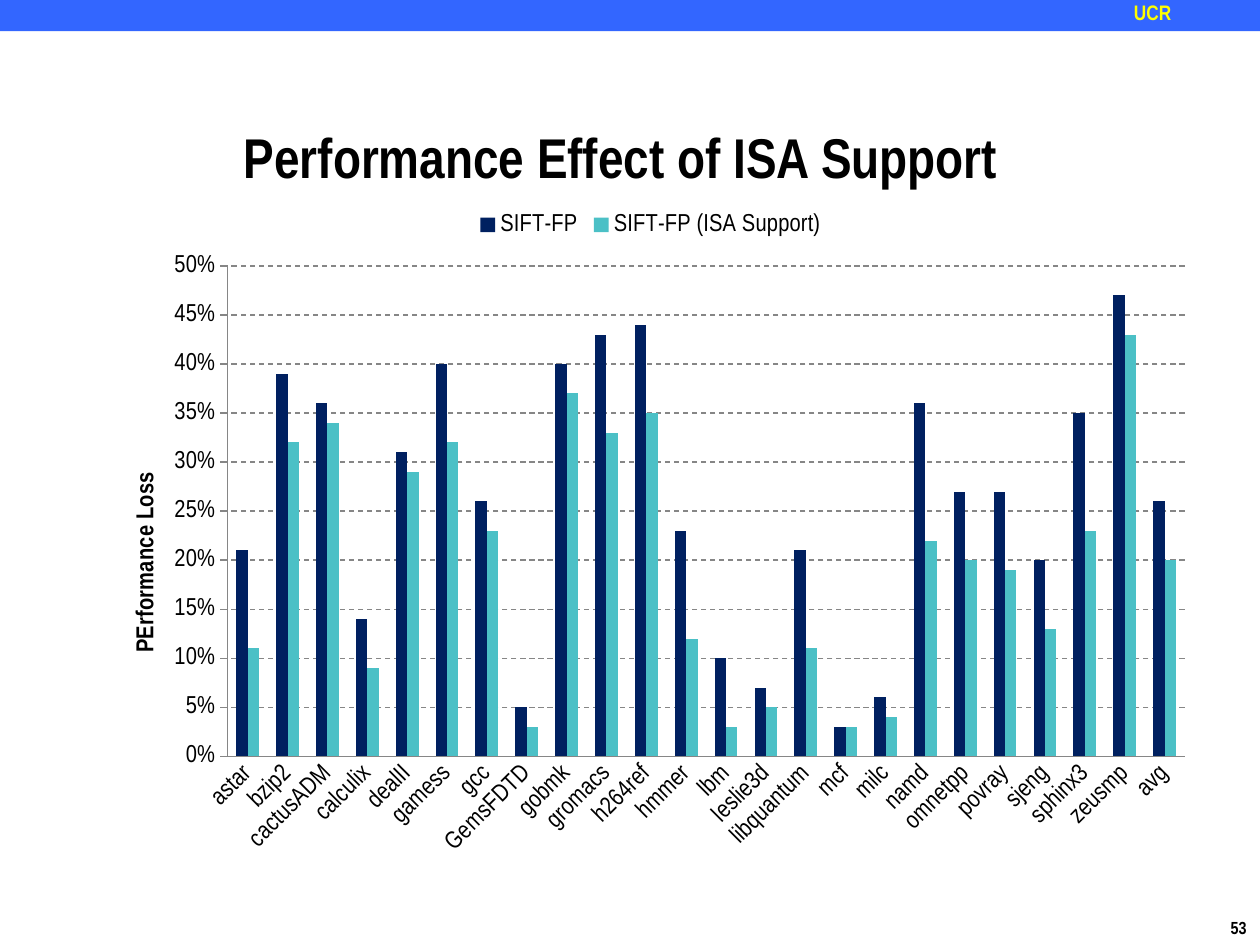
from pptx import Presentation
from pptx.chart import data
from pptx.dml.color import RGBColor
from pptx.enum import chart as ch, dml, shapes, text
from pptx.oxml import parse_xml
from pptx.oxml.ns import nsdecls, qn
from pptx.util import Cm, Pt

BLACK = RGBColor(0x00, 0x00, 0x00)
BLUE = RGBColor(0x33, 0x66, 0xFF)
YELLOW = RGBColor(0xFF, 0xFF, 0x00)
NAVY = RGBColor(0x00, 0x20, 0x60)
TEAL = RGBColor(0x4B, 0xC0, 0xC6)
GRAY = RGBColor(0x86, 0x86, 0x86)
FONT = "Arial Narrow"

LABELS = [
    {"words": "53", "box": (24.56, 18.36, 0.86, 0.69), "size": 10, "color": BLACK,
     "frame": {"word_wrap": False}, "paragraph": {}},
    {"words": "UCR", "box": (22.86, 0, 2.54, 0.56), "size": 12, "color": YELLOW,
     "frame": {"word_wrap": True, "margin_left": 0, "margin_top": 0,
               "margin_right": 0, "margin_bottom": 0}, "paragraph": {}},
    {"words": "Performance Effect of ISA Support", "box": (2.54, 2.49, 19.96, 1.7),
     "size": 32, "color": BLACK, "frame": {"word_wrap": True},
     "paragraph": {"alignment": text.PP_ALIGN.CENTER, "line_spacing": 0.9}},
]
LOSSES = [
    ("astar", 21, 11), ("bzip2", 39, 32), ("cactusADM", 36, 34), ("calculix", 14, 9),
    ("dealII", 31, 29), ("gamess", 40, 32), ("gcc", 26, 23), ("GemsFDTD", 5, 3),
    ("gobmk", 40, 37), ("gromacs", 43, 33), ("h264ref", 44, 35), ("hmmer", 23, 12),
    ("lbm", 10, 3), ("leslie3d", 7, 5), ("libquantum", 21, 11), ("mcf", 3, 3),
    ("milc", 6, 4), ("namd", 36, 22), ("omnetpp", 27, 20), ("povray", 27, 19),
    ("sjeng", 20, 13), ("sphinx3", 35, 23), ("zeusmp", 47, 43), ("avg", 26, 20),
]
SCHEMES = [("SIFT-FP", NAVY), ("SIFT-FP (ISA Support)", TEAL)]


def set_all(target, values):
    for key, value in values.items():
        setattr(target, key, value)


def style_font(font, size, color=BLACK, bold=False):
    set_all(font, {"name": FONT, "size": Pt(size), "bold": bold})
    font.color.rgb = color


def add_label(slide, label):
    frame = slide.shapes.add_textbox(*map(Cm, label["box"])).text_frame
    set_all(frame, label["frame"])
    paragraph = frame.paragraphs[0]
    set_all(paragraph, label["paragraph"])
    run = paragraph.add_run()
    run.text = label["words"]
    style_font(run.font, label["size"], label["color"], True)


def manual_layout(target="", **fractions):
    inner = f'<c:layoutTarget val="{target}"/>' if target else ""
    modes = "".join(f'<c:{k}Mode val="edge"/>' for k in fractions if k in "xy")
    places = "".join(f'<c:{k} val="{v}"/>' for k, v in fractions.items())
    return parse_xml(f'<c:layout {nsdecls("c")}><c:manualLayout>{inner}{modes}{places}'
                     '</c:manualLayout></c:layout>')


def drop_layout(parent):
    for layout in parent.findall(qn("c:layout")):
        parent.remove(layout)


def add_loss_chart(slide):
    losses = data.CategoryChartData(number_format="0%")
    losses.categories = [row[0] for row in LOSSES]
    for column, (scheme, _) in enumerate(SCHEMES, 1):
        losses.add_series(scheme, [row[column] / 100 for row in LOSSES])
    chart = slide.shapes.add_chart(ch.XL_CHART_TYPE.COLUMN_CLUSTERED, Cm(1.9), Cm(4.01),
                                   Cm(22.43), Cm(13.54), losses).chart
    chart.has_title = False
    style_font(chart.font, 10)
    chart.has_legend = True
    set_all(chart.legend, {"position": ch.XL_LEGEND_POSITION.TOP, "include_in_layout": False})
    style_font(chart.legend.font, 14)

    bars = chart.plots[0]
    set_all(bars, {"gap_width": 150, "overlap": 0, "vary_by_categories": False})
    for series, (_, color) in zip(bars.series, SCHEMES):
        series.format.fill.solid()
        series.format.fill.fore_color.rgb = color

    programs, loss = chart.category_axis, chart.value_axis
    for axis, tick in ((programs, ch.XL_TICK_MARK.NONE), (loss, ch.XL_TICK_MARK.OUTSIDE)):
        set_all(axis, {"major_tick_mark": tick, "minor_tick_mark": ch.XL_TICK_MARK.NONE})
        style_font(axis.tick_labels.font, 14)
        axis.format.line.color.rgb = GRAY
        axis.format.line.width = Pt(0.75)
    programs._element.find(qn("c:txPr")).find(qn("a:bodyPr")).set("rot", "-2700000")
    set_all(loss, {"minimum_scale": 0, "maximum_scale": 0.5, "major_unit": 0.05,
                   "has_major_gridlines": True})
    set_all(loss.tick_labels, {"number_format": "0%", "number_format_is_linked": False})
    grid = loss.major_gridlines.format.line
    grid.color.rgb = GRAY
    set_all(grid, {"width": Pt(0.75), "dash_style": dml.MSO_LINE.DASH})

    caption = loss.axis_title
    caption.text_frame.text = "PErformance Loss"
    style_font(caption.text_frame.paragraphs[0].runs[0].font, 14, bold=True)
    caption.text_frame._txBody.find(qn("a:bodyPr")).set("rot", "-5400000")
    heading = caption._element
    drop_layout(heading)
    heading.find(qn("c:tx")).addnext(manual_layout(x=0.03, y=0.4))
    area = chart._chartSpace.chart.plotArea
    drop_layout(area)
    area.insert(0, manual_layout("inner", x=0.12, y=0.1, w=0.86, h=0.73))


def main():
    deck = Presentation()
    set_all(deck, {"slide_width": Cm(25.4), "slide_height": Cm(19.05)})
    slide = deck.slides.add_slide(deck.slide_layouts[6])
    banner = slide.shapes.add_shape(shapes.MSO_SHAPE.RECTANGLE, 0, 0, Cm(25.4), Cm(0.63))
    banner.shadow.inherit = False
    banner.fill.solid()
    banner.fill.fore_color.rgb = BLUE
    banner.line.fill.background()
    add_loss_chart(slide)
    for label in LABELS:
        add_label(slide, label)
    deck.save("out.pptx")


if __name__ == "__main__":
    main()
